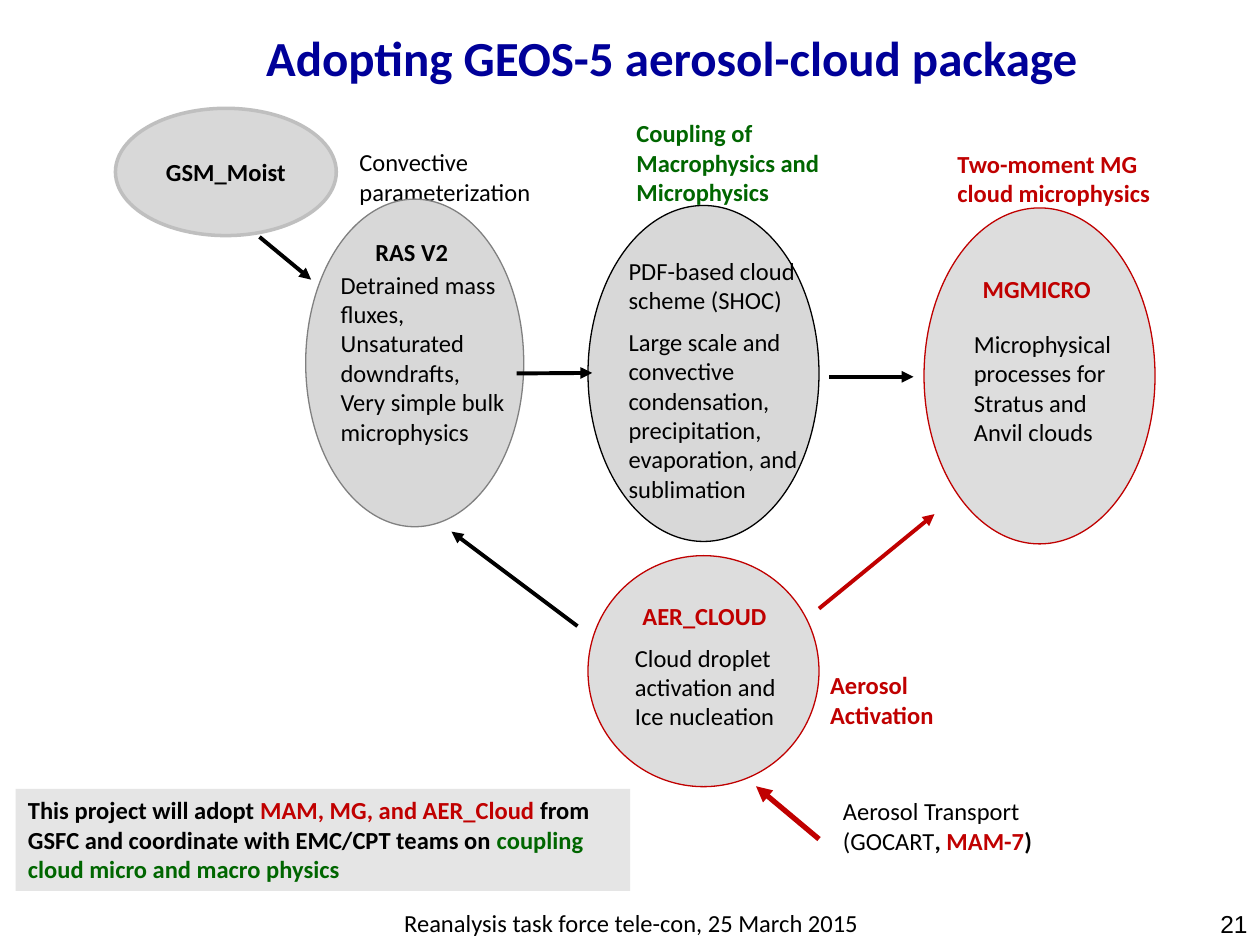
from lxml import etree
from pptx import Presentation
from pptx.dml.color import RGBColor
from pptx.enum import shapes, text
from pptx.oxml.ns import qn
from pptx.util import Pt

BLACK = RGBColor(0x00, 0x00, 0x00)
NAVY = RGBColor(0x00, 0x00, 0x99)
RED = RGBColor(0xC0, 0x00, 0x00)
GREEN = RGBColor(0x00, 0x66, 0x00)
GRAY = RGBColor(0x80, 0x80, 0x80)
SILVER = RGBColor(0xBF, 0xBF, 0xBF)
FILL = RGBColor(0xD8, 0xD8, 0xD8)
FILL_LIGHT = RGBColor(0xDD, 0xDD, 0xDD)
FILL_NOTE = RGBColor(0xE5, 0xE5, 0xE5)

LEFT, CENTER, RIGHT = text.PP_ALIGN.LEFT, text.PP_ALIGN.CENTER, text.PP_ALIGN.RIGHT
TOP, MIDDLE = text.MSO_ANCHOR.TOP, text.MSO_ANCHOR.MIDDLE

prs = Presentation()
prs.slide_width, prs.slide_height = Pt(720), Pt(540)
slide = prs.slides.add_slide(prs.slide_layouts[5])


def write(shape, paragraphs, align=LEFT, anchor=TOP, size=14, font="Calibri", gap=0):
    """Fill a shape with paragraphs, each a list of (words, colour, bold) runs."""
    frame = shape.text_frame
    settings = {
        "word_wrap": True, "auto_size": text.MSO_AUTO_SIZE.NONE, "vertical_anchor": anchor,
        "margin_left": Pt(7.2), "margin_right": Pt(7.2),
        "margin_top": Pt(3.6), "margin_bottom": Pt(3.6),
    }
    for name, value in settings.items():
        setattr(frame, name, value)
    for i, runs in enumerate(paragraphs):
        paragraph = frame.add_paragraph() if i else frame.paragraphs[0]
        paragraph.alignment = align
        if i and gap:
            paragraph.space_before = Pt(gap)
        for j, (words, color, bold) in enumerate(runs):
            for k, line in enumerate(words.split("\v")):
                if k:
                    paragraph.add_line_break()
                run = paragraph.add_run()
                run.text = line
                for name, value in {"size": Pt(size), "name": font, "bold": bold}.items():
                    setattr(run.font, name, value)
                run.font.color.rgb = color


def block(kind, box, fill, line=None, width=0.75):
    """Add a filled preset shape without shadow."""
    shape = slide.shapes.add_shape(kind, *map(Pt, box))
    shape.shadow.inherit = False
    shape.fill.solid()
    shape.fill.fore_color.rgb = fill
    if line is None:
        shape.line.fill.background()
    else:
        shape.line.color.rgb = line
        shape.line.width = Pt(width)
    return shape


# Title
title = slide.shapes.title
for name, value in {"left": 59.8, "top": 8.6, "width": 648, "height": 48.2}.items():
    setattr(title, name, Pt(value))
write(title, [[("Adopting GEOS-5 aerosol-cloud package", NAVY, True)]],
      CENTER, MIDDLE, size=28)

# Labels above the convective ellipse, which overlaps them
convective = slide.shapes.add_textbox(Pt(198.3), Pt(80.6), Pt(120.2), Pt(41))
write(convective, [[("Convective parameterization", BLACK, False)]])

# Component ellipses
OVAL = shapes.MSO_SHAPE.OVAL
for box, fill, line in [
    ((336, 117.4, 132, 192), FILL, BLACK),
    ((336, 317.5, 132, 132), FILL_LIGHT, RED),
    ((528, 118.8, 132, 192), FILL_LIGHT, RED),
    ((174.7, 113.8, 124.6, 187.2), FILL, GRAY),
]:
    block(OVAL, box, fill, line)
gsm = block(OVAL, (66, 61.9, 126.2, 72.7), FILL, SILVER, 2)
write(gsm, [[("GSM_Moist", BLACK, True)]], CENTER, MIDDLE)

# Component names, descriptions and captions
for box, paragraphs, gap in [
    ((352.1, 142.6, 113.8, 177), [
        [("PDF-based cloud scheme (SHOC)", BLACK, False)],
        [("Large scale and convective condensation, precipitation, "
          "evaporation, and sublimation", BLACK, False)]], 7),
    ((360, 339.8, 102.2, 24.5), [[("AER_CLOUD", RED, True)]], 0),
    ((355.7, 363.6, 102.2, 58.3),
     [[("Cloud droplet activation and Ice nucleation", BLACK, False)]], 0),
    ((554.4, 153.2, 90, 24), [[("MGMICRO", RED, True)]], 0),
    ((549.4, 184.3, 102.2, 100.8),
     [[("Microphysical processes for Stratus and\vAnvil clouds", BLACK, False)]], 0),
    ((207.4, 131.8, 90, 24), [[("RAS V2", BLACK, True)]], 0),
    ((187.5, 150.5, 121.7, 108.7), [
        [("Detrained mass fluxes,", BLACK, False)],
        [("Unsaturated downdrafts,", BLACK, False)],
        [("Very simple bulk microphysics", BLACK, False)]], 0),
    ((356.6, 64.1, 141.1, 58.3),
     [[("Coupling of Macrophysics and Microphysics", GREEN, True)]], 0),
    ((540, 81.4, 147.6, 41), [[("Two-moment MG\vcloud microphysics", RED, True)]], 0),
    ((467.3, 379.4, 105.1, 41), [[("Aerosol Activation", RED, True)]], 0),
    ((474.6, 451.4, 161.3, 41), [[
        ("Aerosol Transport (GOCART", BLACK, False), (",", BLACK, True),
        (" MAM-7", RED, True), (")", BLACK, True)]], 0),
]:
    write(slide.shapes.add_textbox(*map(Pt, box)), paragraphs, gap=gap)

# Project note
note = block(shapes.MSO_SHAPE.RECTANGLE, (8.9, 450.8, 351.2, 58.3), FILL_NOTE)
write(note, [[
    ("This project will adopt ", BLACK, True),
    ("MAM, MG, and AER_Cloud ", RED, True),
    ("from GSFC and coordinate with EMC/CPT teams on ", BLACK, True),
    ("coupling cloud micro and macro physics", GREEN, True)]])

# Flow arrows
for start, end, color, width in [
    ((148.3, 135.4), (177.8, 159.8), BLACK, 2.25),
    ((295.2, 213.4), (338.4, 213.1), BLACK, 2.25),
    ((474, 215.3), (522, 215.3), BLACK, 2.25),
    ((330, 357.8), (258, 303.8), BLACK, 2.25),
    ((468, 347.8), (534, 293.8), RED, 2.25),
    ((468, 479.5), (432, 449.3), RED, 3),
]:
    arrow = slide.shapes.add_connector(
        shapes.MSO_CONNECTOR.STRAIGHT, *map(Pt, start + end))
    arrow.line.color.rgb = color
    arrow.line.width = Pt(width)
    etree.SubElement(arrow.line._get_or_add_ln(), qn("a:tailEnd"), type="triangle")
    etree.SubElement(arrow._element.spPr, qn("a:effectLst"))

# Footer and page number
footer = slide.shapes.add_textbox(Pt(223.9), Pt(515.5), Pt(276.5), Pt(24.5))
write(footer, [[("Reanalysis task force tele-con, 25 March 2015", BLACK, False)]])
page = slide.shapes.add_textbox(Pt(552), Pt(516.2), Pt(168), Pt(23.8))
write(page, [[("21", BLACK, False)]], RIGHT, font="Arial")

prs.save("out.pptx")
